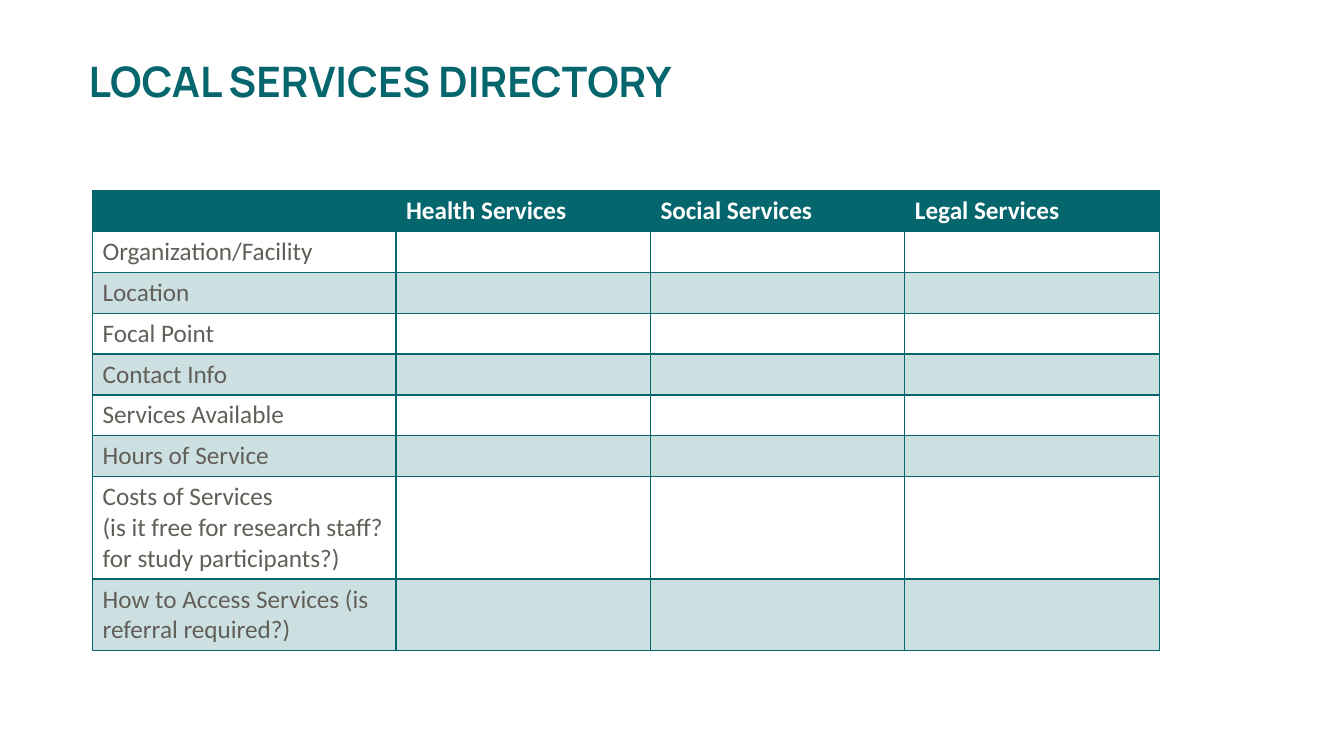
from lxml.etree import SubElement
from pptx import Presentation
from pptx.dml.color import RGBColor
from pptx.enum.text import MSO_ANCHOR, MSO_AUTO_SIZE, PP_ALIGN
from pptx.oxml.ns import qn
from pptx.util import Pt

TEAL = "05676D"
GRAY = "625E58"
WHITE = "FFFFFF"

HEADS = ["", "Health Services", "Social Services", "Legal Services"]
LABELS = [
    "Organization/Facility",
    "Location",
    "Focal Point",
    "Contact Info",
    "Services Available",
    "Hours of Service",
    "Costs of Services\n(is it free for research staff? for study participants?)",
    "How to Access Services (is referral required?)",
]


def tint(hue):
    return RGBColor.from_string(hue)


def write(frame, text, size=18, font="Calibri", hue=GRAY, bold=False, lead=None):
    frame.text = text
    for para in frame.paragraphs:
        para.alignment = PP_ALIGN.LEFT
        para.line_spacing = lead
        para.font.size = Pt(size)
        for run in para.runs:
            run.font.size = Pt(size)
            run.font.name = font
            run.font.bold = bold
            run.font.color.rgb = tint(hue)


def paint(cell, hue=None, alpha=100):
    if hue is None:
        cell.fill.background()
        return
    cell.fill.solid()
    cell.fill.fore_color.rgb = tint(hue)
    if alpha < 100:
        fill = cell._tc.get_or_add_tcPr().find(qn("a:solidFill"))
        SubElement(fill[0], qn("a:alpha"), val=str(alpha * 1000))


def edge(cell, hue, width):
    props = cell._tc.get_or_add_tcPr()
    for side in ("lnL", "lnR", "lnT", "lnB"):
        line = SubElement(props, qn("a:" + side), w=str(Pt(width)))
        fill = SubElement(line, qn("a:solidFill"))
        SubElement(fill, qn("a:srgbClr"), val=hue)


def add_title(slide, left, top, width, height):
    title = slide.shapes.title
    title.left, title.top = Pt(left), Pt(top)
    title.width, title.height = Pt(width), Pt(height)
    frame = title.text_frame
    frame.word_wrap = True
    frame.auto_size = MSO_AUTO_SIZE.NONE
    frame.vertical_anchor = MSO_ANCHOR.MIDDLE
    frame.margin_left, frame.margin_right = Pt(63.36), Pt(7.2)
    frame.margin_top = frame.margin_bottom = Pt(3.6)
    write(frame, "LOCAL SERVICES DIRECTORY", size=30, font="Manrope",
          hue=TEAL, bold=True, lead=0.9)


def add_grid(slide, left, top, width, height):
    rows = [HEADS] + [[label, "", "", ""] for label in LABELS]
    shape = slide.shapes.add_table(len(rows), len(HEADS), Pt(left), Pt(top),
                                   Pt(width), Pt(height))
    table = shape.table
    first = width * 0.2845
    rest = (width - first) / 3
    for i, col in enumerate(table.columns):
        col.width = Pt(rest if i else first)
    for i, texts in enumerate(rows):
        table.rows[i].height = Pt(29.2)
        for j, text in enumerate(texts):
            cell = table.cell(i, j)
            edge(cell, TEAL, 1)
            if i == 0:
                paint(cell, TEAL)
                write(cell.text_frame, text, hue=WHITE, bold=True)
            else:
                paint(cell, None if i % 2 else TEAL, alpha=20)
                write(cell.text_frame, text)
    shape.height = Pt(height)


def main():
    deck = Presentation()
    deck.slide_width, deck.slide_height = Pt(960), Pt(540)
    slide = deck.slides.add_slide(deck.slide_layouts[5])
    add_title(slide, 0, 15.1, 828, 90)
    add_grid(slide, 66.1, 136.1, 762, 327)
    deck.save("out.pptx")


if __name__ == "__main__":
    main()
